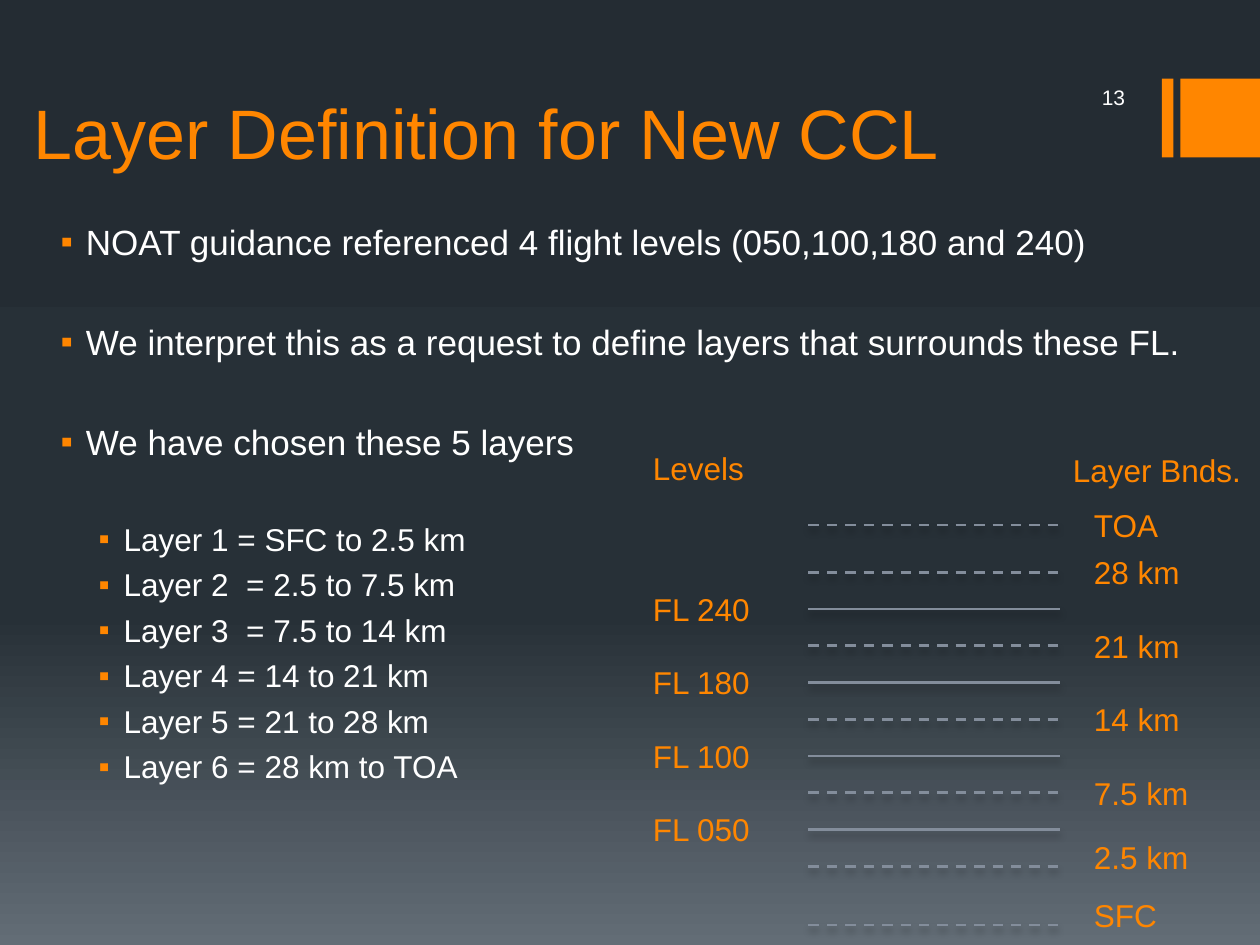
from dataclasses import dataclass

import pptx
import pptx.dml.color
import pptx.enum.dml
import pptx.enum.shapes
import pptx.enum.text
import pptx.oxml
import pptx.oxml.ns
import pptx.util
from lxml import etree

Pt = pptx.util.Pt
Anchor = pptx.enum.text.MSO_ANCHOR
Align = pptx.enum.text.PP_ALIGN
qn = pptx.oxml.ns.qn


@dataclass(frozen=True)
class Theme:
    font: str = "Arial"
    accent: str = "FF8600"
    text: str = "FFFFFF"
    rule: str = "838D9B"
    shadow: str = "000000"
    backdrop: tuple = ((0, "242C33"), (65, "273037"), (100, "636D76"))
    title_size: int = 40
    body_size: int = 20
    label_size: int = 18
    number_size: int = 12


@dataclass(frozen=True)
class Box:
    left: float
    top: float
    width: float
    height: float

    def lengths(self):
        return [Pt(v) for v in (self.left, self.top, self.width, self.height)]


THEME = Theme()

POINTS = (
    "NOAT guidance referenced 4 flight levels (050,100,180 and 240)",
    "We interpret this as a request to define layers that surrounds these FL.",
    "We have chosen these 5 layers",
)
LAYERS = (
    "Layer 1 = SFC to 2.5 km",
    "Layer 2  = 2.5 to 7.5 km",
    "Layer 3  = 7.5 to 14 km",
    "Layer 4 = 14 to 21 km",
    "Layer 5 = 21 to 28 km",
    "Layer 6 = 28 km to TOA",
)
FLIGHT_LEVELS = ("FL 240", "FL 180", "FL 100", "FL 050")
INNER_BOUNDS = ("28 km", "21 km", "14 km", "7.5 km", "2.5 km")


def rgb(color):
    return pptx.dml.color.RGBColor.from_string(color)


def style(paragraph, size, color):
    paragraph.font.name = THEME.font
    paragraph.font.size = Pt(size)
    paragraph.font.color.rgb = rgb(color)


def add_text(slide, box, text, size, color, anchor=Anchor.TOP, align=Align.LEFT):
    frame = slide.shapes.add_textbox(*box.lengths()).text_frame
    frame.word_wrap = True
    frame.vertical_anchor = anchor
    paragraph = frame.paragraphs[0]
    paragraph.text = text
    paragraph.alignment = align
    style(paragraph, size, color)
    return frame


def add_label(slide, box, text):
    frame = add_text(slide, box, text, THEME.label_size, THEME.accent)
    frame.auto_size = pptx.enum.text.MSO_AUTO_SIZE.SHAPE_TO_FIT_TEXT


def add_bullet(paragraph, left, hanging):
    properties = paragraph._p.get_or_add_pPr()
    properties.set("marL", str(Pt(left)))
    properties.set("indent", str(-Pt(hanging)))
    color = etree.SubElement(properties, qn("a:buClr"))
    etree.SubElement(color, qn("a:srgbClr"), val=THEME.accent)
    etree.SubElement(properties, qn("a:buFont"), typeface=THEME.font)
    etree.SubElement(properties, qn("a:buChar"), char="▪")


def add_rule(slide, left, right, y, dashed):
    rule = slide.shapes.add_connector(
        pptx.enum.shapes.MSO_CONNECTOR.STRAIGHT, Pt(left), Pt(y), Pt(right), Pt(y))
    rule.line.color.rgb = rgb(THEME.rule)
    rule.line.width = Pt(1.5)
    if dashed:
        rule.line.dash_style = pptx.enum.dml.MSO_LINE.DASH
    effects = etree.SubElement(rule._element.spPr, qn("a:effectLst"))
    shadow = etree.SubElement(
        effects, qn("a:outerShdw"), blurRad=str(Pt(4)), dist=str(Pt(3)),
        dir="5400000", rotWithShape="0")
    color = etree.SubElement(shadow, qn("a:srgbClr"), val=THEME.shadow)
    etree.SubElement(color, qn("a:alpha"), val="28000")


def paint_background(slide):
    fill = slide.background.fill
    fill.gradient()
    fill.gradient_angle = 270
    stops = slide._element.find(".//" + qn("a:gsLst"))
    for stop in list(stops):
        stops.remove(stop)
    for position, color in THEME.backdrop:
        stop = etree.SubElement(stops, qn("a:gs"), pos=str(position * 1000))
        etree.SubElement(stop, qn("a:srgbClr"), val=color)


def add_corner_tab(slide, box):
    bar_width, gap = 6.5, 4
    block_left = box.left + bar_width + gap
    block_width = box.width - bar_width - gap
    for left, width in ((box.left, bar_width), (block_left, block_width)):
        part = slide.shapes.add_shape(
            pptx.enum.shapes.MSO_SHAPE.RECTANGLE,
            *Box(left, box.top, width, box.height).lengths())
        part.shadow.inherit = False
        part.fill.solid()
        part.fill.fore_color.rgb = rgb(THEME.accent)
        part.line.fill.background()


def add_body(slide, box):
    frame = slide.shapes.add_textbox(*box.lengths()).text_frame
    frame.word_wrap = True
    frame.margin_top = Pt(6)
    wide, narrow = 33, 4.4
    entries = [(text, 18, THEME.body_size, wide) for text in POINTS]
    entries += [(text, 39.6, THEME.label_size, narrow if i else wide)
                for i, text in enumerate(LAYERS)]
    for i, (text, indent, size, space) in enumerate(entries):
        paragraph = frame.add_paragraph() if i else frame.paragraphs[0]
        paragraph.text = text
        paragraph.level = int(text in LAYERS)
        paragraph.space_before = Pt(space if i else 0)
        add_bullet(paragraph, indent, 14.4)
        style(paragraph, size, THEME.text)


def add_level_diagram(slide, box):
    label_width, label_height, step = 84, 28.8, 42
    rule_left, rule_right = box.left + 96, box.left + 240
    bound_left = box.left + 252
    first_level = box.top + 95
    first_bound = first_level - step / 2

    add_label(slide, Box(box.left, box.top, label_width, label_height), "Levels")
    add_label(slide, Box(rule_right, box.top + 1, box.width - 240, label_height),
              "Layer Bnds.")

    for i, name in enumerate(FLIGHT_LEVELS):
        y = first_level + i * step
        add_rule(slide, rule_left, rule_right, y, dashed=False)
        add_label(slide, Box(box.left, y - label_height / 2, label_width,
                             label_height), name)

    bounds = [("TOA", box.top + 47, 0)]
    bounds += [(name, first_bound + i * step, 0)
               for i, name in enumerate(INNER_BOUNDS[:-1])]
    bounds += [(INNER_BOUNDS[-1], first_bound + 4 * step, -5.5),
               ("SFC", box.top + 275.5, -5.5)]
    for name, y, shift in bounds:
        add_rule(slide, rule_left, rule_right, y, dashed=True)
        add_label(slide, Box(bound_left, y + shift - label_height / 2,
                             label_width, label_height), name)


def main():
    deck = pptx.Presentation()
    deck.slide_width, deck.slide_height = Pt(720), Pt(540)
    slide = deck.slides.add_slide(deck.slide_layouts[6])
    paint_background(slide)
    add_corner_tab(slide, Box(664, 45, 56, 45))
    add_text(slide, Box(12, 12, 576, 91), "Layer Definition for New CCL",
             THEME.title_size, THEME.accent, Anchor.BOTTOM)
    add_text(slide, Box(576, 43.5, 74, 24), "13", THEME.number_size, THEME.text,
             Anchor.MIDDLE, Align.RIGHT)
    add_body(slide, Box(24, 120, 660, 336))
    add_level_diagram(slide, Box(366, 253, 354, 287))
    deck.save("out.pptx")


if __name__ == "__main__":
    main()
